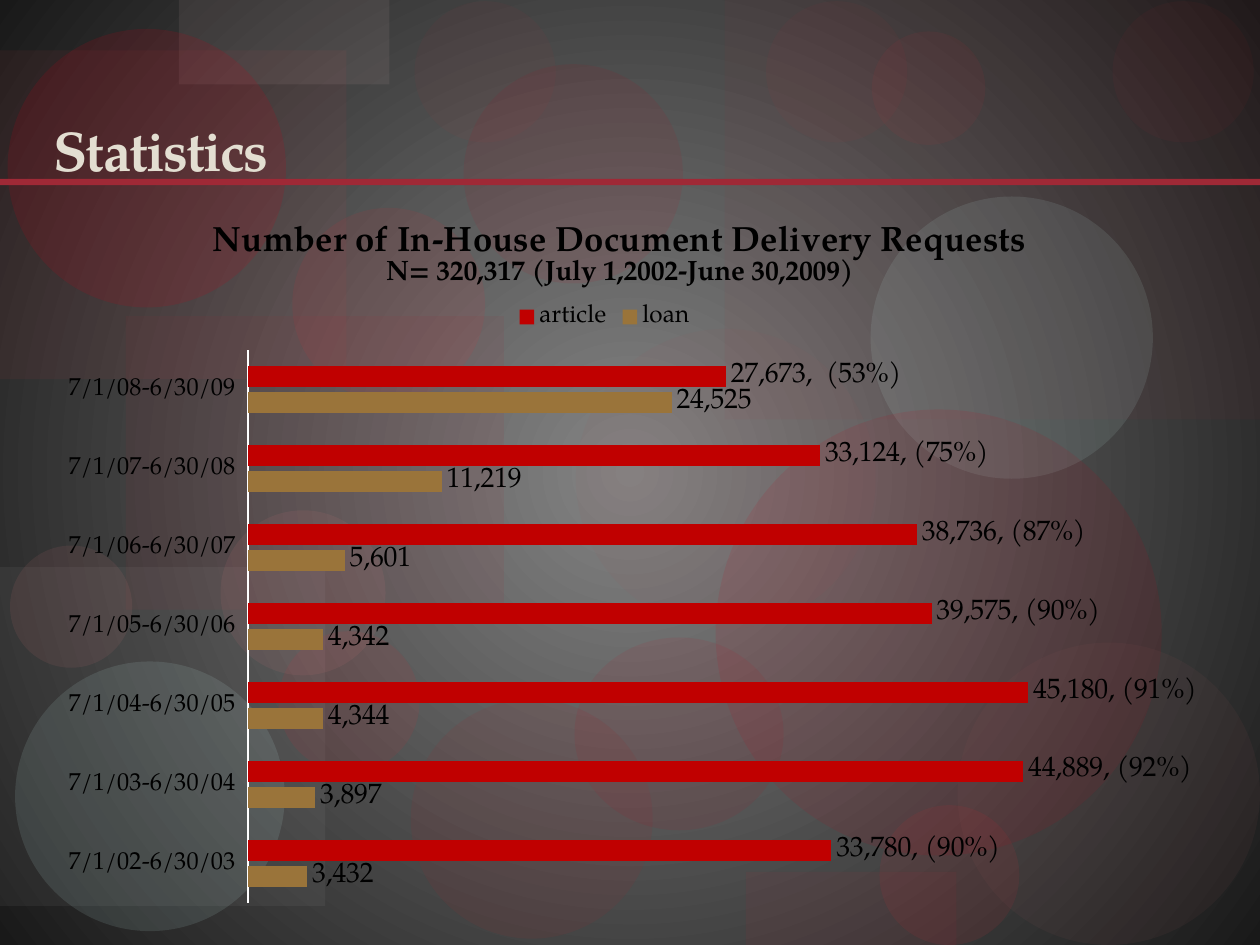
from lxml.etree import SubElement
from pptx import Presentation
from pptx.chart.data import CategoryChartData
from pptx.dml.color import RGBColor
from pptx.enum.chart import XL_CHART_TYPE, XL_LABEL_POSITION, XL_LEGEND_POSITION, XL_TICK_LABEL_POSITION, XL_TICK_MARK
from pptx.enum.shapes import MSO_SHAPE
from pptx.enum.text import MSO_ANCHOR
from pptx.oxml import parse_xml
from pptx.oxml.ns import nsdecls, qn
from pptx.util import Inches, Pt

FONT = "TeX Gyre Pagella"
BACKGROUND = ["848484", "191919"]
RECT, OVAL = MSO_SHAPE.RECTANGLE, MSO_SHAPE.OVAL
DECORATIONS = [
    (RECT, 1, 2.51, 3, 2.33, "9F2936", 9),
    (OVAL, 3.26, 5.55, 1.92, 1.9, "932C32", 13),
    (RECT, 5.75, 0, 4.25, 3.33, "9F2936", 6),
    (RECT, 0, 4.5, 2.58, 2.69, "AEAEAE", 8),
    (OVAL, 4.57, 2.61, 2.38, 2.38, "9D585B", 8),
    (OVAL, 6.98, 6.39, 1.11, 1.11, "EC232F", 9),
    (OVAL, 6.91, 1.56, 2.24, 2.24, "C1E8E4", 11),
    (OVAL, 0.12, 5.25, 2.14, 2.14, "C1E8E4", 12),
    (OVAL, 2.21, 5.01, 1.12, 1.12, "EC232F", 9),
    (OVAL, 4.56, 5.06, 1.66, 1.53, "C80016", 8),
    (RECT, 0, 0.4, 2.75, 2.61, "D03F47", 7),
    (RECT, 1.42, 0, 1.67, 0.67, "CDADAE", 10),
    (OVAL, 0.06, 0.23, 2.21, 2.21, "C80016", 15),
    (OVAL, 0.08, 4.33, 0.97, 0.97, "D5777B", 10),
    (OVAL, 2.32, 1.65, 1.53, 1.53, "EC232F", 9),
    (OVAL, 3.68, 0.51, 1.74, 1.74, "C80016", 8),
    (OVAL, 5.68, 3.25, 3.54, 3.54, "C80016", 10),
    (OVAL, 6.08, 0.01, 1.12, 1.12, "EC232F", 4),
    (OVAL, 7.6, 5.1, 2.4, 2.4, "9D585B", 8),
    (OVAL, 1.75, 4.05, 1.31, 1.31, "D5777B", 10),
    (OVAL, 6.92, 0.25, 0.9, 0.9, "EC232F", 6),
    (OVAL, 8.83, 0.01, 1.12, 1.12, "EC232F", 4),
    (RECT, 5.92, 6.92, 1.67, 0.58, "9F2936", 10),
    (OVAL, 3.29, 0.01, 1.12, 1.12, "EC232F", 4),
    (RECT, 0, 1.42, 10, 0.05, "9F2936", 100),
]
TITLE = "Statistics"
CHART_TITLE = [
    ("Number of In-House Document Delivery Requests", 20),
    ("N= 320,317 (July 1,2002-June 30,2009)", 16),
]
YEARS = ["7/1/02-6/30/03", "7/1/03-6/30/04", "7/1/04-6/30/05", "7/1/05-6/30/06",
         "7/1/06-6/30/07", "7/1/07-6/30/08", "7/1/08-6/30/09"]
SERIES = [
    ("loan", "9A743A", [3432, 3897, 4344, 4342, 5601, 11219, 24525]),
    ("article", "C00000", [33780, 44889, 45180, 39575, 38736, 33124, 27673]),
]
ARTICLE_LABELS = ["33,780, (90%)", "44,889, (92%)", "45,180, (91%)", "39,575, (90%)",
                  "38,736, (87%)", "33,124, (75%)", "27,673,  (53%)"]
PLOT_SHARES = {"x": 0.165, "y": 0.21, "w": 0.77, "h": 0.77}
TITLE_SHARES = {"x": 0.13, "y": 0.03}
LEGEND_SHARES = {"x": 0.4, "y": 0.14}


def color(value):
    return RGBColor.from_string(value)


def style(font, value="000000", **formats):
    font.color.rgb = color(value)
    for name, setting in {"name": FONT, **formats}.items():
        setattr(font, name, setting)


def paint_background(page):
    fill = page.background.fill
    fill.gradient()
    for stop, value in zip(fill.gradient_stops, BACKGROUND):
        stop.color.rgb = color(value)
    gradient = page.element.find(".//" + qn("a:gradFill"))
    gradient.remove(gradient.find(qn("a:lin")))
    gradient.append(parse_xml(
        f'<a:path {nsdecls("a")} path="circle">'
        '<a:fillToRect l="50000" t="50000" r="50000" b="50000"/></a:path>'))


def add_decoration(page, kind, left, top, width, height, value, opacity):
    shape = page.shapes.add_shape(kind, *map(Inches, (left, top, width, height)))
    shape.shadow.inherit = False
    shape.line.fill.background()
    shape.fill.solid()
    shape.fill.fore_color.rgb = color(value)
    if opacity < 100:
        paint = shape.element.spPr.find(".//" + qn("a:srgbClr"))
        SubElement(paint, qn("a:alpha"), val=str(opacity * 1000))


def add_title(page):
    box = page.shapes.add_textbox(*map(Inches, (0.33, 0.8, 9, 0.7)))
    box.text_frame.word_wrap = True
    box.text_frame.vertical_anchor = MSO_ANCHOR.BOTTOM
    span = box.text_frame.paragraphs[0].add_run()
    span.text = TITLE
    style(span.font, "E3DED1", size=Pt(32), bold=True)
    span.font._element.set("spc", "-100")


def place(part, shares, inner=False):
    """Set a manual layout, in shares of the chart's size, on a chart part."""
    for old in part.findall(qn("c:layout")):
        part.remove(old)
    modes = '<c:layoutTarget val="inner"/>' if inner else ""
    modes += '<c:xMode val="edge"/><c:yMode val="edge"/>'
    values = "".join(f'<c:{name} val="{share}"/>' for name, share in shares.items())
    layout = parse_xml(f'<c:layout {nsdecls("c")}><c:manualLayout>{modes}{values}'
                       '</c:manualLayout></c:layout>')
    before = [child for child in part if child.tag in (qn("c:tx"), qn("c:legendPos"))]
    part.insert(part.index(before[-1]) + 1 if before else 0, layout)


def add_chart_title(chart):
    frame = chart.chart_title.text_frame
    for index, (text, size) in enumerate(CHART_TITLE):
        para = frame.add_paragraph() if index else frame.paragraphs[0]
        span = para.add_run()
        span.text = text
        style(span.font, size=Pt(size), bold=True)
    chart.chart_title.include_in_layout = False
    place(chart.chart_title._element, TITLE_SHARES)


def format_axes(chart):
    axis = chart.category_axis
    axis.major_tick_mark = axis.minor_tick_mark = XL_TICK_MARK.NONE
    axis.tick_label_position = XL_TICK_LABEL_POSITION.LOW
    axis.format.line.color.rgb = color("FFFFFF")
    axis.format.line.width = Pt(1.5)
    style(axis.tick_labels.font, size=Pt(14))
    values = chart.value_axis
    values.minimum_scale, values.maximum_scale = 0, 50000
    values.has_major_gridlines = False
    values.visible = False


def format_series(plot):
    plot.gap_width, plot.overlap, plot.vary_by_categories = 150, -25, False
    for series, (name, value, _) in zip(plot.series, SERIES):
        series.format.fill.solid()
        series.format.fill.fore_color.rgb = color(value)
        labels = series.data_labels
        labels.show_value = True
        labels.number_format, labels.number_format_is_linked = "#,##0", False
        labels.position = XL_LABEL_POSITION.OUTSIDE_END
        style(labels.font, size=Pt(16))
        if name == "article":
            for index, text in enumerate(ARTICLE_LABELS):
                label = series.points[index].data_label
                span = label.text_frame.paragraphs[0].add_run()
                span.text = text
                style(span.font, size=Pt(16))
                label.position = XL_LABEL_POSITION.OUTSIDE_END


def add_requests_chart(page):
    data = CategoryChartData(number_format="#,##0")
    data.categories = YEARS
    for name, _, values in SERIES:
        data.add_series(name, values)
    area = map(Inches, (0.5, 1.58, 9, 5.7))
    chart = page.shapes.add_chart(XL_CHART_TYPE.BAR_CLUSTERED, *area, data).chart
    style(chart.font, "FFFFFF", size=Pt(10))
    add_chart_title(chart)
    chart.has_legend = True
    chart.legend.position = XL_LEGEND_POSITION.TOP
    chart.legend.include_in_layout = False
    style(chart.legend.font, size=Pt(14))
    place(chart.legend._element, LEGEND_SHARES)
    format_axes(chart)
    format_series(chart.plots[0])
    place(chart._chartSpace.chart.plotArea, PLOT_SHARES, inner=True)


def main():
    deck = Presentation()
    deck.slide_width, deck.slide_height = Inches(10), Inches(7.5)
    page = deck.slides.add_slide(deck.slide_layouts[6])
    paint_background(page)
    for decoration in DECORATIONS:
        add_decoration(page, *decoration)
    add_title(page)
    add_requests_chart(page)
    deck.save("out.pptx")


if __name__ == "__main__":
    main()
